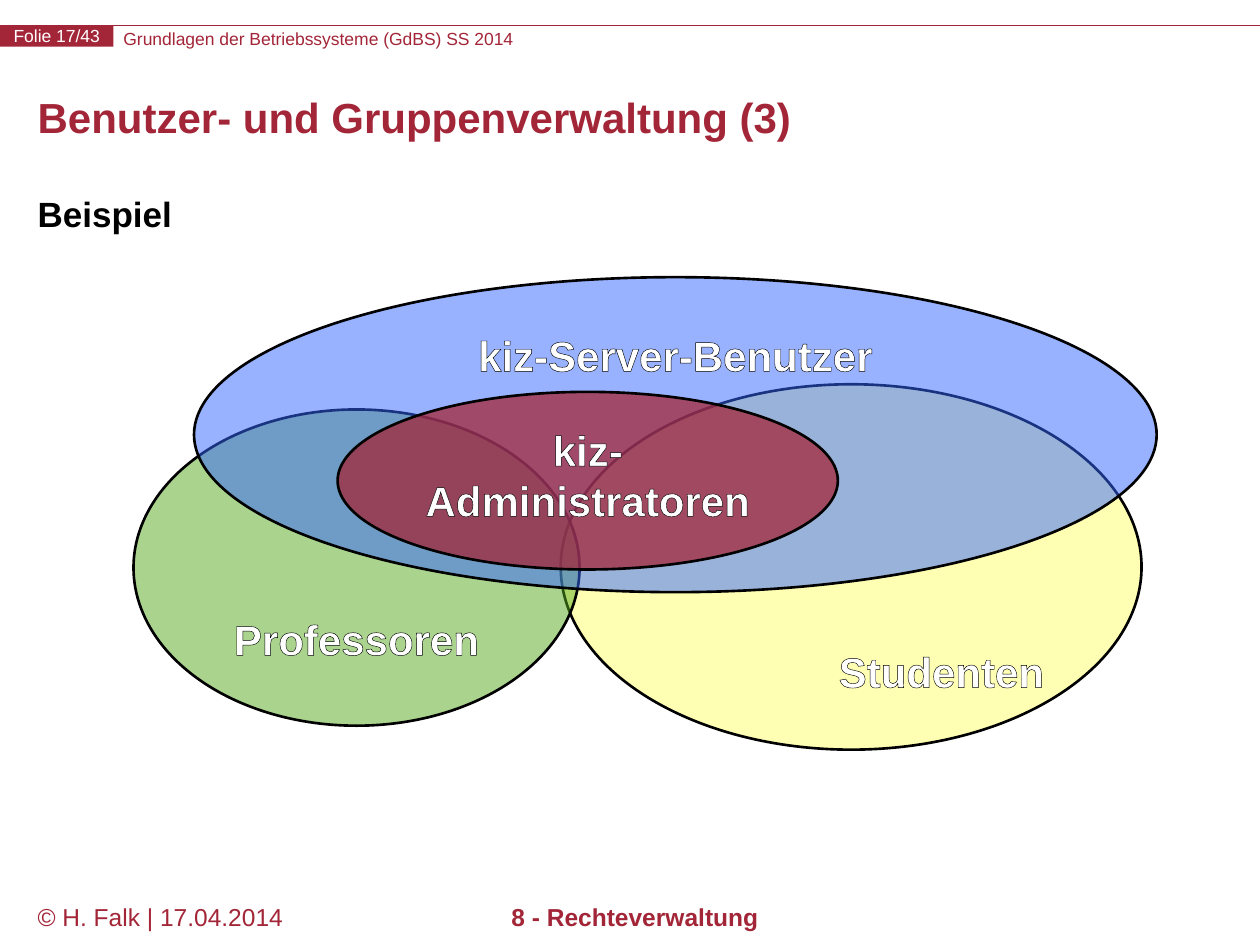
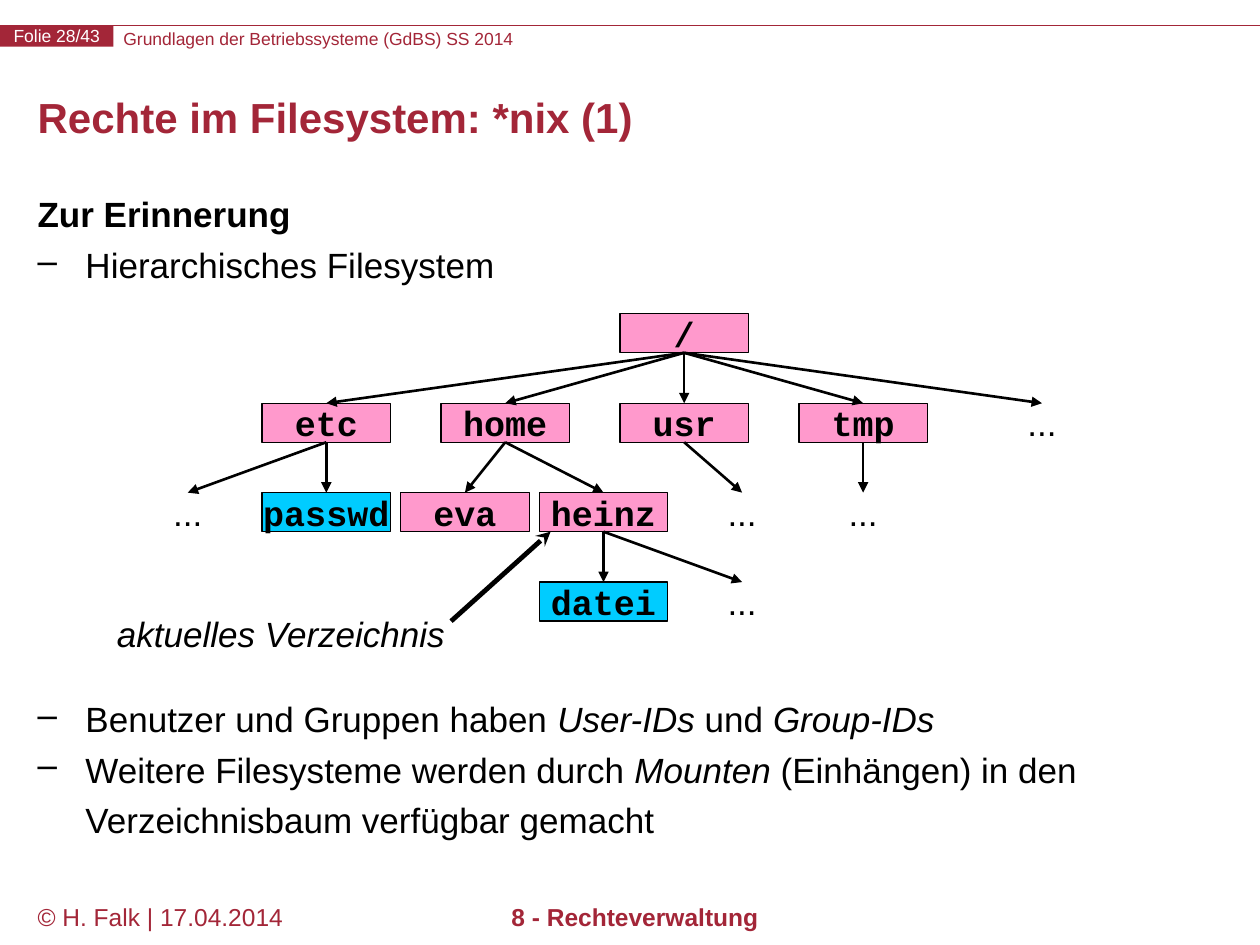
from dataclasses import dataclass

from lxml import etree
from pptx import Presentation
from pptx import util as u
from pptx.dml.color import RGBColor
from pptx.enum import shapes, text
from pptx.oxml import ns

Inches, Pt = u.Inches, u.Pt
LEFT, CENTER, RIGHT = text.PP_ALIGN.LEFT, text.PP_ALIGN.CENTER, text.PP_ALIGN.RIGHT
TOP, MIDDLE = text.MSO_ANCHOR.TOP, text.MSO_ANCHOR.MIDDLE


@dataclass(frozen=True)
class Theme:
    red: str = "A32638"
    black: str = "000000"
    white: str = "FFFFFF"
    directory: str = "FF99CC"
    file: str = "00CCFF"
    students: str = "FFFFB3"
    professors: str = "56AA1C"
    server_users: str = "3366FF"
    font: str = "Arial"
    mono: str = "Courier New"
    header: int = 10
    footer: int = 14
    body: int = 20
    title: int = 24


THEME = Theme()
TOTAL_PAGES = 43
LINE_HEIGHT = 1.2  # of the type size
NODE_WIDTH, NODE_HEIGHT = 1.02, 0.31
TREE_TOP, ROW_STEP = 2.49, 0.71
DOTS = "..."
FILES = {"passwd", "datei"}


def folder_left(column):
    return 2.08 + 1.42 * column


def leaf_left(column):
    return 0.98 + 1.1 * column


# Each node: label, left edge, children
FILE_TREE = ("/", folder_left(2), [
    ("etc", folder_left(0), [
        (DOTS, leaf_left(0), []),
        ("passwd", leaf_left(1), []),
    ]),
    ("home", folder_left(1), [
        ("eva", leaf_left(2), []),
        ("heinz", leaf_left(3), [
            ("datei", leaf_left(3), []),
            (DOTS, leaf_left(4), []),
        ]),
    ]),
    ("usr", folder_left(2), [(DOTS, leaf_left(4), [])]),
    ("tmp", folder_left(3), [(DOTS, folder_left(3), [])]),
    (DOTS, folder_left(4), []),
])


def rgb(color):
    return RGBColor.from_string(color)


def add_xml(parent, tag, **attributes):
    return etree.SubElement(parent, ns.qn(tag), attributes)


def style_font(font, size, color, bold=False, italic=False, name=THEME.font):
    font.name, font.size, font.bold, font.italic = name, Pt(size), bold, italic
    font.color.rgb = rgb(color)


def write(box, words, size, color, align=LEFT, anchor=TOP, wrap=True, **style):
    frame = box.text_frame
    frame.text = words
    frame.word_wrap = wrap
    frame.vertical_anchor = anchor
    para = frame.paragraphs[0]
    para.alignment = align
    style_font(para.runs[0].font, size, color, **style)
    return para


def clear_margins(box):
    frame = box.text_frame
    frame.margin_left = frame.margin_right = 0
    frame.margin_top = frame.margin_bottom = 0


def add_label(page, place, words, size, color, **style):
    box = page.shapes.add_textbox(*map(Inches, place))
    write(box, words, size, color, **style)
    return box


def add_filled(page, kind, place, fill, line_width=None, opacity=100):
    """Add a preset shape; without line_width it has no outline."""
    shape = page.shapes.add_shape(kind, *map(Inches, place))
    shape.shadow.inherit = False
    shape.fill.solid()
    shape.fill.fore_color.rgb = rgb(fill)
    if opacity < 100:
        color = shape.fill._xPr.find(ns.qn("a:solidFill"))[0]
        add_xml(color, "a:alpha", val=str(opacity * 1000))
    if line_width is None:
        shape.line.fill.background()
    else:
        shape.line.color.rgb = rgb(THEME.black)
        shape.line.width = Pt(line_width)
    return shape


def add_line(page, start, end, color=THEME.black, width=1.5, head=None):
    line = page.shapes.add_connector(
        shapes.MSO_CONNECTOR.STRAIGHT, *map(Inches, (*start, *end)))
    line.line.color.rgb = rgb(color)
    line.line.width = Pt(width)
    if head:
        add_xml(line.line._get_or_add_ln(), "a:tailEnd", type=head)
    add_xml(line._element.spPr, "a:effectLst")
    return line


def add_page(deck, number, title):
    """Add a blank page with header band, footer and title."""
    page = deck.slides.add_slide(deck.slide_layouts[6])
    add_line(page, (0, 0.2), (10, 0.2), THEME.red, 0.75)
    course = add_label(page, (0.98, 0.22, 6.6, 0.17),
                       "Grundlagen der Betriebssysteme (GdBS) SS 2014",
                       THEME.header, THEME.red)
    band = add_filled(page, shapes.MSO_SHAPE.RECTANGLE, (0, 0.2, 0.9, 0.17), THEME.red)
    write(band, f"Folie {number}/{TOTAL_PAGES}", THEME.header, THEME.white,
          align=CENTER, anchor=MIDDLE, wrap=False)
    for box in (course, band):
        clear_margins(box)
    add_label(page, (0.2, 7.11, 2.2, 0.39), "© H. Falk | 17.04.2014",
              THEME.footer, THEME.red)
    add_label(page, (2.01, 7.11, 6.06, 0.39), "8 - Rechteverwaltung",
              THEME.footer, THEME.red, align=CENTER, bold=True)
    heading = add_label(page, (0.2, 0.6, 9.61, 0.72), title,
                        THEME.title, THEME.red, anchor=MIDDLE, bold=True)
    heading.text_frame.paragraphs[0].line_spacing = Pt(24)
    return page


def add_body(page, heading):
    box = add_label(page, (0.2, 1.52, 9.61, 5.46), heading,
                    THEME.body, THEME.black, bold=True)
    box.text_frame.paragraphs[0].line_spacing = 0.9
    return box


def add_bullet(box, spans, space_before=0):
    """Add a dash item; every second span is italic."""
    para = box.text_frame.add_paragraph()
    para.line_spacing = 1.2
    para.space_before = Pt(space_before)
    for index, words in enumerate(spans):
        span = para.add_run()
        span.text = words
        style_font(span.font, THEME.body, THEME.black, italic=index % 2 == 1)
    properties = para._p.get_or_add_pPr()
    properties.set("marL", str(Inches(0.38)))
    properties.set("indent", str(Inches(-0.38)))
    add_xml(properties, "a:buChar", char="–")


def add_group(page, place, words, fill, opacity=100, lines_down=0, align=CENTER):
    """Add an ellipse whose outlined label starts lines_down lines below its top."""
    ellipse = add_filled(page, shapes.MSO_SHAPE.OVAL, place, fill, 1.5, opacity)
    para = write(ellipse, words, THEME.title, THEME.white, align=align, bold=True)
    frame = ellipse.text_frame
    frame.margin_top = Inches(0.05) + Pt(lines_down * LINE_HEIGHT * THEME.title)
    frame.margin_bottom = 0
    properties = para.runs[0].font._element
    outline = add_xml(properties, "a:ln", w=str(Pt(0.75)))
    add_xml(add_xml(outline, "a:solidFill"), "a:srgbClr", val=THEME.black)
    properties.insert(0, outline)


def add_node(page, label, left, row):
    place = (left, TREE_TOP + ROW_STEP * row, NODE_WIDTH, NODE_HEIGHT)
    layout = dict(align=CENTER, anchor=MIDDLE, wrap=False)
    if label == DOTS:
        return add_label(page, place, label, THEME.body, THEME.black, **layout)
    fill = THEME.file if label in FILES else THEME.directory
    node = add_filled(page, shapes.MSO_SHAPE.RECTANGLE, place, fill, 0.75)
    write(node, label, THEME.body, THEME.black, bold=True, name=THEME.mono, **layout)
    return node


def add_tree(page, tree, row=0):
    label, left, children = tree
    node = add_node(page, label, left, row)
    for child in children:
        child_node = add_tree(page, child, row + 1)
        arrow = add_line(page, (0, 0), (1, 1), head="triangle")
        arrow.begin_connect(node, 2)
        arrow.end_connect(child_node, 0)
    return node


def add_groups_page(deck):
    page = add_page(deck, 17, "Benutzer- und Gruppenverwaltung (3)")
    add_body(page, "Beispiel")
    add_group(page, (4.45, 3.05, 4.61, 2.9), "Studenten", THEME.students,
              lines_down=4, align=RIGHT)
    add_group(page, (1.06, 3.25, 3.54, 2.51), "Professoren", THEME.professors,
              opacity=50, lines_down=3)
    add_group(page, (1.54, 2.2, 7.64, 2.5), "kiz-Server-Benutzer",
              THEME.server_users, opacity=50)
    add_group(page, (2.68, 3.11, 3.97, 1.41), "kiz-Administratoren",
              THEME.red, opacity=75)


def add_filesystem_page(deck):
    page = add_page(deck, 28, "Rechte im Filesystem: *nix (1)")
    body = add_body(page, "Zur Erinnerung")
    add_bullet(body, ["Hierarchisches Filesystem"])
    add_bullet(body, ["Benutzer und Gruppen haben ", "User-IDs", " und ", "Group-IDs"],
               space_before=230.5)
    add_bullet(body, ["Weitere Filesysteme werden durch ", "Mounten",
                      " (Einhängen) in den Verzeichnisbaum verfügbar gemacht"])
    add_tree(page, FILE_TREE)
    add_label(page, (0.83, 4.81, 2.81, 0.43), "aktuelles Verzeichnis",
              THEME.body, THEME.black, wrap=False, italic=True)
    add_line(page, (3.58, 4.93), (4.37, 4.22), width=2.75, head="stealth")


def main():
    deck = Presentation()
    deck.slide_width, deck.slide_height = Inches(10), Inches(7.5)
    add_groups_page(deck)
    add_filesystem_page(deck)
    deck.save("out.pptx")


if __name__ == "__main__":
    main()
